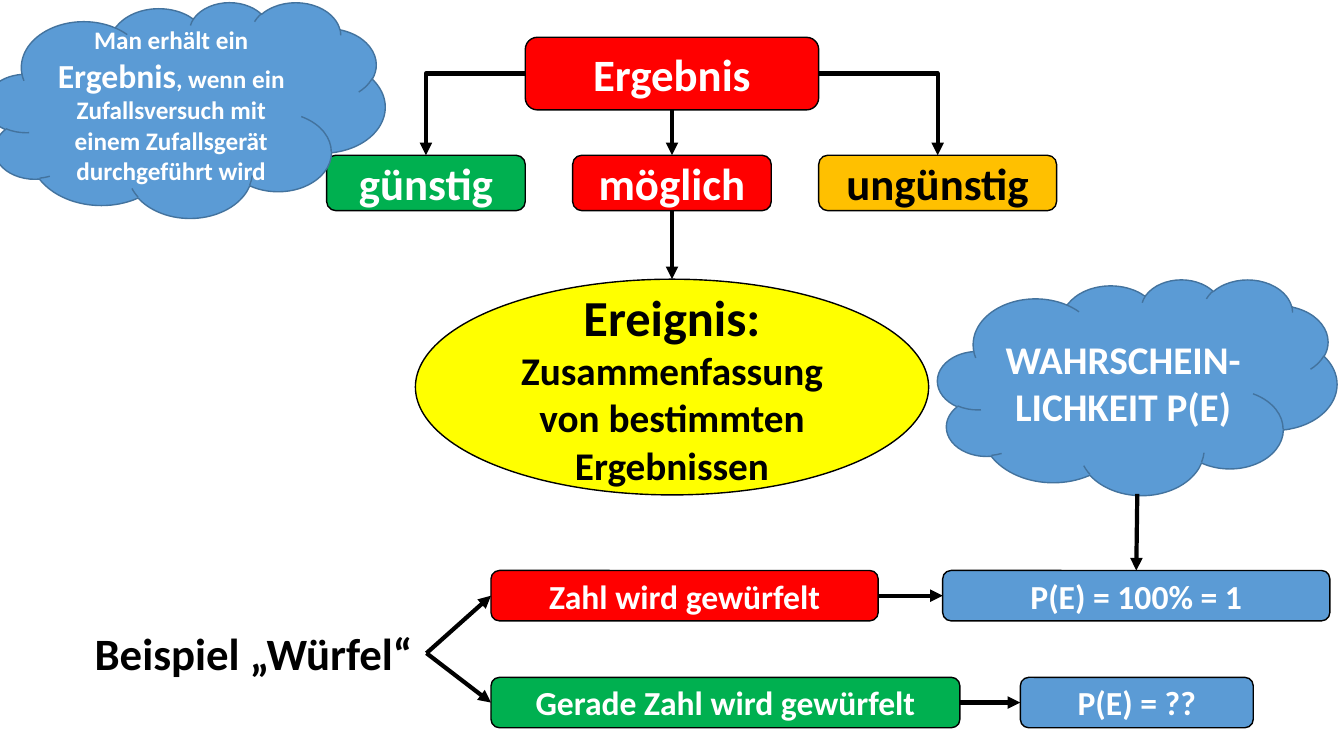
from lxml import etree
from pptx import Presentation
from pptx.dml.color import RGBColor
from pptx.enum.shapes import MSO_CONNECTOR, MSO_SHAPE
from pptx.enum.text import MSO_ANCHOR, PP_ALIGN
from pptx.oxml.ns import qn
from pptx.util import Emu, Pt

EMU_PER_PX = 9144  # 100 px to the inch
STRAIGHT, ELBOW = MSO_CONNECTOR.STRAIGHT, MSO_CONNECTOR.ELBOW
ROUNDED, ELLIPSE, CLOUD = MSO_SHAPE.ROUNDED_RECTANGLE, MSO_SHAPE.OVAL, MSO_SHAPE.CLOUD
MIDDLE, CENTER = MSO_ANCHOR.MIDDLE, PP_ALIGN.CENTER
TOP, LEFT, BOTTOM, RIGHT = range(4)
COLORS = {
    "red": "FF0000", "green": "00B050", "orange": "FFC000", "yellow": "FFFF00",
    "blue": "5B9BD5", "edge": "43739E", "black": "000000", "white": "FFFFFF",
}


def px(length):
    return Emu(length * EMU_PER_PX)


def color(name):
    return RGBColor.from_string(COLORS[name])


def add_span(para, text, size, ink):
    span = para.add_run()
    span.text = text
    span.font.color.rgb = color(ink)
    for name, value in {"name": "Calibri", "size": Pt(size), "bold": True}.items():
        setattr(span.font, name, value)


def add_box(slide, kind, place, paragraphs, fill, ink="white", edge="black"):
    """Add a filled shape; each paragraph is a list of (text, size) spans."""
    box = slide.shapes.add_shape(kind, *map(px, place))
    box.shadow.inherit = False
    box.fill.solid()
    box.fill.fore_color.rgb = color(fill)
    box.line.color.rgb = color(edge)
    box.line.width = Pt(1)
    frame = box.text_frame
    frame.word_wrap = True
    frame.vertical_anchor = MIDDLE
    for index, spans in enumerate(paragraphs):
        para = frame.add_paragraph() if index else frame.paragraphs[0]
        para.alignment = CENTER
        for text, size in spans:
            add_span(para, text, size, ink)
    return box


def add_label(slide, place, text, size):
    label = slide.shapes.add_textbox(*map(px, place))
    label.text_frame.word_wrap = False
    add_span(label.text_frame.paragraphs[0], text, size, "black")


def side_point(box, side):
    across = {LEFT: 0, TOP: 1, BOTTOM: 1, RIGHT: 2}[side]
    down = {TOP: 0, LEFT: 1, RIGHT: 1, BOTTOM: 2}[side]
    return box.left + box.width * across // 2, box.top + box.height * down // 2


def add_arrow(slide, start, target, side, kind=STRAIGHT):
    """Point at a side of target; start is a (box, side) or an (x, y) in px."""
    from_box = not isinstance(start[0], int)
    begin = side_point(*start) if from_box else map(px, start)
    arrow = slide.shapes.add_connector(kind, *begin, *side_point(target, side))
    arrow.line.color.rgb = color("black")
    arrow.line.width = Pt(3)
    etree.SubElement(arrow.line._get_or_add_ln(), qn("a:tailEnd"), type="triangle")
    properties = arrow._element.spPr
    etree.SubElement(properties, qn("a:effectLst"))
    if kind == ELBOW:
        properties.find(qn("a:prstGeom")).set("prst", "bentConnector2")
        return
    if from_box:
        arrow.begin_connect(*start)
    arrow.end_connect(target, side)


def add_outcomes(slide):
    result = add_box(slide, ROUNDED, (521, 37, 291, 72), [[("Ergebnis", 32)]], "red")
    outcomes = [
        ("günstig", 324, 197, "green", "white", LEFT, ELBOW),
        ("ungünstig", 812, 236, "orange", "black", RIGHT, ELBOW),
        ("möglich", 568, 197, "red", "white", BOTTOM, STRAIGHT),
    ]
    for text, left, width, fill, ink, side, kind in outcomes:
        outcome = add_box(slide, ROUNDED, (left, 154, width, 55), [[(text, 32)]], fill, ink)
        add_arrow(slide, (result, side), outcome, TOP, kind)
    event_text = [
        [("Ereignis:", 36)],
        [("Zusammenfassung von bestimmten Ergebnissen", 28)],
    ]
    event = add_box(slide, ELLIPSE, (412, 277, 509, 214), event_text, "yellow", "black")
    add_arrow(slide, (outcome, BOTTOM), event, TOP)


def add_dice_example(slide):
    add_label(slide, (84, 616, 339, 64), "Beispiel „Würfel“", 32)
    examples = [
        (566, "Zahl wird gewürfelt", 384, "red", "P(E) = 100% = 1", 935, 384),
        (672, "Gerade Zahl wird gewürfelt", 465, "green", "P(E) = ??", 1012, 231),
    ]
    chances = []
    for top, text, width, fill, chance_text, left, chance_width in examples:
        event = add_box(slide, ROUNDED, (487, top, width, 50), [[(text, 24)]], fill)
        chance = add_box(
            slide, ROUNDED, (left, top, chance_width, 50), [[(chance_text, 24)]], "blue"
        )
        add_arrow(slide, (423, 648), event, LEFT)
        add_arrow(slide, (event, RIGHT), chance, LEFT)
        chances.append(chance)
    return chances[0]


def add_clouds(slide, certain_chance):
    probability = [[("WAHRSCHEIN-LICHKEIT P(E)", 28)]]
    definition = [[
        ("Man erhält ein ", 18),
        ("Ergebnis", 24),
        (", wenn ein Zufallsversuch mit einem Zufallsgerät durchgeführt wird", 18),
    ]]
    for left, top, text in ((930, 277, probability), (-14, 2, definition)):
        add_box(slide, CLOUD, (left, top, 396, 214), text, "blue", edge="edge")
    add_arrow(slide, (1128, 490), certain_chance, TOP)


def main():
    deck = Presentation()
    deck.slide_width, deck.slide_height = px(1333), px(750)
    slide = deck.slides.add_slide(deck.slide_layouts[6])
    add_outcomes(slide)
    certain_chance = add_dice_example(slide)
    add_clouds(slide, certain_chance)
    deck.save("out.pptx")


if __name__ == "__main__":
    main()
